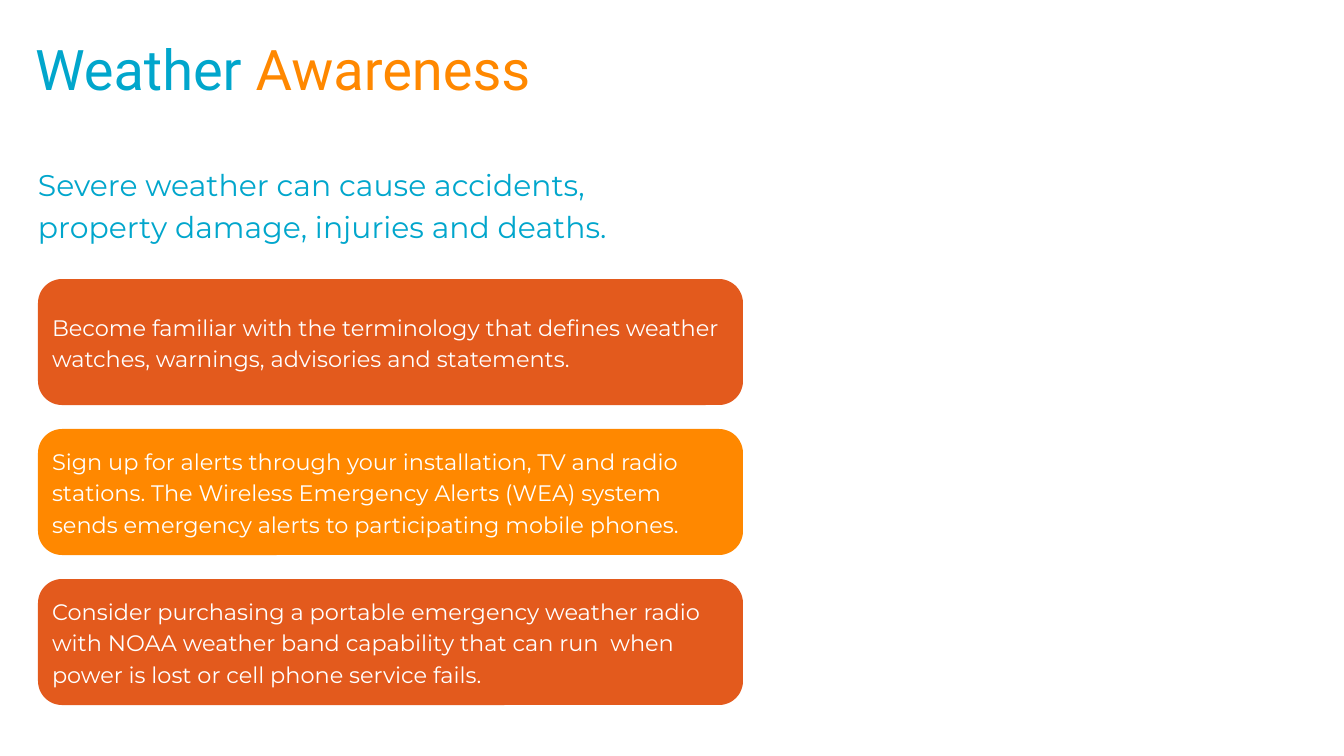
import pptx
import pptx.dml.color
import pptx.enum.shapes
import pptx.enum.text
import pptx.util

TEAL, ORANGE, RUST, WHITE = "01A6CC", "FF8800", "E35A1D", "FFFFFF"

TITLE = [("Weather ", TEAL), ("Awareness", ORANGE)]
LEAD = "Severe weather can cause accidents, property damage, injuries and deaths."
TIPS = [
    ("Become familiar with the terminology that defines weather watches, "
     "warnings, advisories and statements.", RUST),
    ("Sign up for alerts through your installation, TV and radio stations. "
     "The Wireless Emergency Alerts (WEA) system sends emergency alerts to "
     "participating mobile phones.", ORANGE),
    ("Consider purchasing a portable emergency weather radio with NOAA weather "
     "band capability that can run  when power is lost or cell phone service "
     "fails.", RUST),
]

# Layout in px
PAGE_WIDTH, PAGE_HEIGHT = 1344, 756
LEFT, TIP_TOP = 38, 279
TIP_WIDTH, TIP_HEIGHT, TIP_GAP = 705, 126, 24
RADIUS, INSET = 24, 7


def px(length):
    return pptx.util.Inches(length / 67.2)


def color(code):
    return pptx.dml.color.RGBColor.from_string(code)


def set_frame(frame, anchor, inset=0, bottom=0):
    frame.word_wrap = True
    frame.auto_size = pptx.enum.text.MSO_AUTO_SIZE.NONE
    frame.vertical_anchor = anchor
    frame.margin_left = frame.margin_right = px(inset)
    frame.margin_top, frame.margin_bottom = 0, px(bottom)


def style_para(para, font, size, leading, codes):
    para.alignment = pptx.enum.text.PP_ALIGN.LEFT
    para.line_spacing = pptx.util.Pt(leading)
    para.space_before = pptx.util.Pt(0)
    for span, code in zip(para.runs, codes):
        span.font.name = font
        span.font.size = pptx.util.Pt(size)
        span.font.color.rgb = color(code)


deck = pptx.Presentation()
deck.slide_width, deck.slide_height = px(PAGE_WIDTH), px(PAGE_HEIGHT)
page = deck.slides.add_slide(deck.slide_layouts[5])
top_anchor = pptx.enum.text.MSO_ANCHOR.TOP
middle_anchor = pptx.enum.text.MSO_ANCHOR.MIDDLE

# Two-colour title
title = page.shapes.title
title.left, title.top, title.width, title.height = px(35), px(40), px(585), px(65)
set_frame(title.text_frame, top_anchor)
title_para = title.text_frame.paragraphs[0]
for words, _ in TITLE:
    title_para.add_run().text = words
style_para(title_para, "Roboto", 60, 66, [code for _, code in TITLE])

# Lead sentence
lead = page.shapes.add_textbox(px(LEFT), px(161), px(670), px(81))
set_frame(lead.text_frame, top_anchor)
lead.text_frame.text = LEAD
style_para(lead.text_frame.paragraphs[0], "Montserrat", 32, 44.8, [TEAL])

# Stack of tips
for row, (words, fill) in enumerate(TIPS):
    tip = page.shapes.add_shape(
        pptx.enum.shapes.MSO_SHAPE.ROUNDED_RECTANGLE,
        px(LEFT), px(TIP_TOP + row * (TIP_HEIGHT + TIP_GAP)),
        px(TIP_WIDTH), px(TIP_HEIGHT))
    tip.adjustments[0] = RADIUS / TIP_HEIGHT
    tip.shadow.inherit = False
    tip.fill.solid()
    tip.fill.fore_color.rgb = color(fill)
    tip.line.fill.background()
    set_frame(tip.text_frame, middle_anchor, INSET, bottom=3)
    tip.text_frame.text = words
    style_para(tip.text_frame.paragraphs[0], "Montserrat", 24, 33.6, [WHITE])

deck.save("out.pptx")
